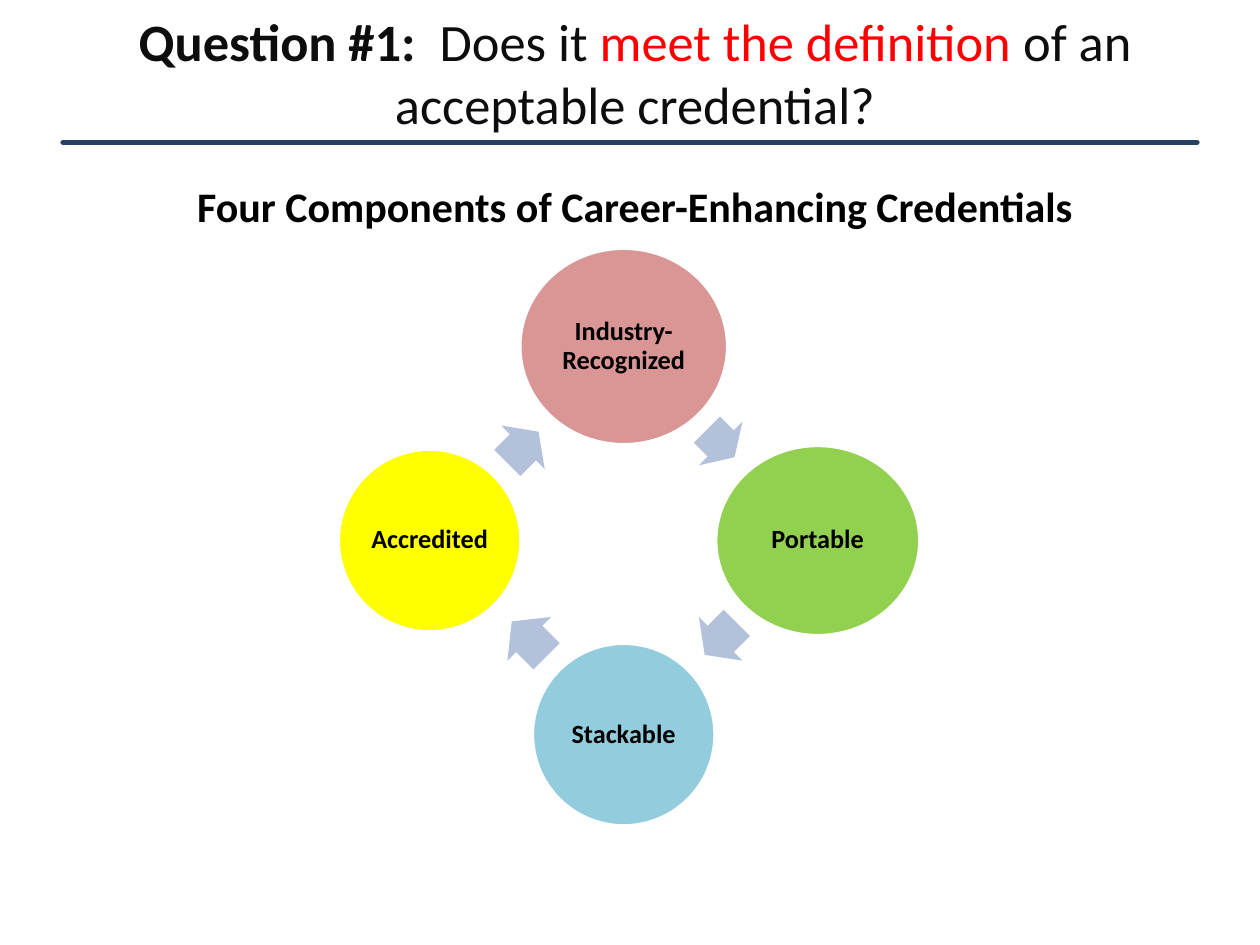
from math import cos, radians, sin

from lxml.etree import SubElement
from pptx import Presentation
from pptx.dml.color import RGBColor
from pptx.enum.shapes import MSO_CONNECTOR, MSO_SHAPE
from pptx.enum.text import MSO_ANCHOR, PP_ALIGN
from pptx.oxml.ns import qn
from pptx.util import Inches, Pt

BLACK = RGBColor(0x00, 0x00, 0x00)
WHITE = RGBColor(0xFF, 0xFF, 0xFF)
INK = RGBColor(0x0D, 0x0D, 0x0D)
RED = RGBColor(0xFF, 0x00, 0x00)
NAVY = RGBColor(0x25, 0x40, 0x61)
ROSE = RGBColor(0xD9, 0x96, 0x94)
GREEN = RGBColor(0x92, 0xD0, 0x50)
BLUE = RGBColor(0x93, 0xCD, 0xDD)
YELLOW = RGBColor(0xFF, 0xFF, 0x00)
MIST = RGBColor(0xB3, 0xC1, 0xDB)


class Deck:
    font = "Calibri"

    def __init__(self, wide, high):
        self.prs = Presentation()
        self.prs.slide_width = Inches(wide)
        self.prs.slide_height = Inches(high)
        self.slide = self.prs.slides.add_slide(self.prs.slide_layouts[6])

    def fill_text(self, frame, size, runs):
        frame.word_wrap = True
        para = frame.paragraphs[0]
        para.alignment = PP_ALIGN.CENTER
        for text, color, bold in runs:
            run = para.add_run()
            run.text = text
            run.font.name = self.font
            run.font.size = Pt(size)
            run.font.bold = bold
            run.font.color.rgb = color
        return para

    def text(self, box, size, runs, anchor=MSO_ANCHOR.TOP):
        frame = self.slide.shapes.add_textbox(*map(Inches, box)).text_frame
        frame.vertical_anchor = anchor
        self.fill_text(frame, size, runs)

    def rule(self, left, right, top, color, width):
        line = self.slide.shapes.add_connector(
            MSO_CONNECTOR.STRAIGHT,
            Inches(left), Inches(top), Inches(right), Inches(top))
        line.line.color.rgb = color
        line.line.width = Pt(width)
        props = line._element.spPr
        props.find(qn("a:ln")).set("cap", "rnd")
        SubElement(props, qn("a:effectLst"))

    def shape(self, kind, x, y, wide, high, fill):
        item = self.slide.shapes.add_shape(
            kind, Inches(x - wide / 2), Inches(y - high / 2),
            Inches(wide), Inches(high))
        item.shadow.inherit = False
        item.fill.solid()
        item.fill.fore_color.rgb = fill
        return item

    def disc(self, x, y, wide, high, fill, label):
        item = self.shape(MSO_SHAPE.OVAL, x, y, wide, high, fill)
        item.line.color.rgb = WHITE
        item.line.width = Pt(2)
        frame = item.text_frame
        frame.vertical_anchor = MSO_ANCHOR.MIDDLE
        frame.margin_left = frame.margin_right = Inches(0.02)
        frame.margin_top = frame.margin_bottom = Inches(0.02)
        para = self.fill_text(frame, 15, [(label, BLACK, True)])
        para.line_spacing = 0.9

    def arrow(self, x, y, wide, turn):
        item = self.shape(MSO_SHAPE.RIGHT_ARROW, x, y, wide, 0.49, MIST)
        item.line.fill.background()
        item.adjustments[0] = 0.6
        item.adjustments[1] = 0.5
        item.rotation = turn


def main():
    deck = Deck(10, 7.5)
    deck.rule(0.5, 9.5, 1.13, NAVY, 3)
    deck.text((0.25, 0.01, 9.58, 1.12), 30, [
        ("Question #1:  ", INK, True),
        ("Does it ", INK, False),
        ("meet the definition ", RED, False),
        ("of an acceptable credential?", INK, False),
    ], MSO_ANCHOR.MIDDLE)
    deck.text((1.08, 1.38, 7.92, 0.5), 24, [
        ("Four Components of Career-Enhancing Credentials", BLACK, True),
    ])

    mid_x, mid_y, reach = 4.95, 4.29, 1.54
    parts = [
        ("Industry-Recognized", ROSE, 1.65, 1.56),
        ("Portable", GREEN, 1.62, 1.51),
        ("Stackable", BLUE, 1.45, 1.45),
        ("Accredited", YELLOW, 1.45, 1.45),
    ]
    arrows = [(5.72, 3.52, 0.31), (5.72, 5.07, 0.36),
              (4.2, 5.07, 0.39), (4.15, 3.55, 0.35)]
    for step, (part, spot) in enumerate(zip(parts, arrows)):
        label, fill, wide, high = part
        turn = 90 * step
        x = mid_x + reach * sin(radians(turn))
        y = mid_y - reach * cos(radians(turn))
        deck.disc(x, y, wide, high, fill, label)
        deck.arrow(*spot, turn + 45)

    deck.prs.save("out.pptx")


if __name__ == "__main__":
    main()
